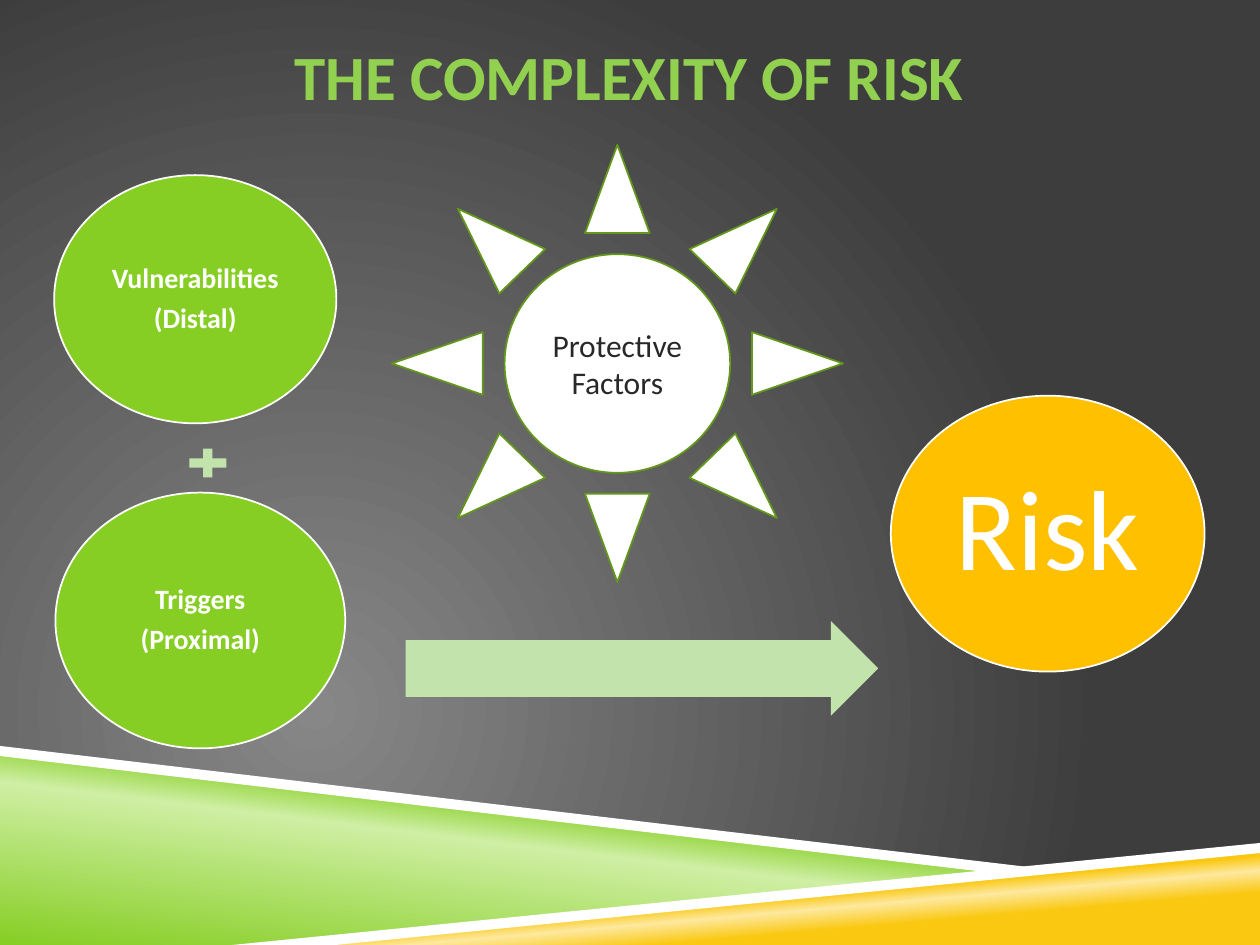
from dataclasses import dataclass

from lxml.etree import SubElement
from pptx import Presentation
from pptx.dml.color import RGBColor
from pptx.enum.shapes import MSO_SHAPE
from pptx.enum.text import MSO_ANCHOR, PP_ALIGN
from pptx.oxml.ns import qn
from pptx.util import Inches, Pt


@dataclass(frozen=True)
class Theme:
    font: str = "Calibri"
    white: str = "FFFFFF"
    title: str = "92D050"
    green: str = "86CE24"
    light_green: str = "CFEFA4"
    pale_green: str = "C3E3AC"
    sun_line: str = "63981B"
    dark: str = "282828"
    amber: str = "FFC000"
    yellow: str = "FAC810"
    light_yellow: str = "FDE99F"
    gray: str = "878787"
    charcoal: str = "3D3D3D"
    title_size: int = 36
    cause_size: int = 16
    factor_size: int = 18
    risk_size: int = 65


theme = Theme()


def set_gradient(solid, stops, angle=None):
    gradient = solid.makeelement(qn("a:gradFill"), {"rotWithShape": "1"})
    stop_list = SubElement(gradient, qn("a:gsLst"))
    for position, color in stops:
        stop = SubElement(stop_list, qn("a:gs"), pos=str(position * 1000))
        SubElement(stop, qn("a:srgbClr"), val=color)
    if angle is None:
        circle = SubElement(gradient, qn("a:path"), path="circle")
        SubElement(circle, qn("a:fillToRect"), l="50000", t="100000", r="100000", b="50000")
    else:
        SubElement(gradient, qn("a:lin"), ang=str(angle * 60000), scaled="0")
    solid.getparent().replace(solid, gradient)


def add_figure(kind, bounds, fill, line=None, lines=(), size=None, color=theme.white,
               bold=False, inset=0.02, line_spacing=0.9, after=0.35):
    figure = slide.shapes.add_shape(kind, *map(Inches, bounds))
    figure.shadow.inherit = False
    figure.fill.solid()
    figure.fill.fore_color.rgb = RGBColor.from_string(fill)
    if line:
        figure.line.color.rgb = RGBColor.from_string(line)
        figure.line.width = Pt(1)
    else:
        figure.line.fill.background()
    frame = figure.text_frame
    frame.word_wrap = True
    frame.vertical_anchor = MSO_ANCHOR.MIDDLE
    frame.margin_left = frame.margin_right = Inches(inset)
    frame.margin_top = frame.margin_bottom = Inches(min(inset, 0.09))
    for index, text in enumerate(lines):
        para = frame.add_paragraph() if index else frame.paragraphs[0]
        para.text = text
        para.alignment = PP_ALIGN.CENTER
        para.line_spacing = line_spacing
        para.space_after = Pt(size * after)
        para.font.name = theme.font
        para.font.size = Pt(size)
        para.font.bold = bold
        para.font.color.rgb = RGBColor.from_string(color)
    return figure


deck = Presentation()
deck.slide_width = Inches(10)
deck.slide_height = Inches(7.5)
slide = deck.slides.add_slide(deck.slide_layouts[5])
slide.background.fill.solid()
set_gradient(slide.element.find(".//" + qn("a:solidFill")),
             [(0, theme.gray), (100, theme.charcoal)])

green_stops = [(0, theme.green), (52, theme.light_green), (66, theme.green)]
yellow_stops = [(28, theme.yellow), (40, theme.light_yellow), (48, theme.yellow)]
bands = [
    ([(0, 5.97), (7.92, 6.92), (2, 7.5), (0, 7.5)], green_stops, 277),
    ([(1.98, 7.5), (10, 6.72), (10, 7.5)], yellow_stops, 265),
    ([(0, 5.92), (0, 6), (7.9, 6.93), (8.32, 6.9)], None, None),
    ([(10, 6.69), (1.84, 7.5), (2.66, 7.5), (10, 6.77)], None, None),
]
for corners, stops, angle in bands:
    points = [(Inches(x), Inches(y)) for x, y in corners]
    builder = slide.shapes.build_freeform(*points[0])
    builder.add_line_segments(points[1:], close=True)
    band = builder.convert_to_shape()
    band.shadow.inherit = False
    band.line.fill.background()
    band.fill.solid()
    band.fill.fore_color.rgb = RGBColor.from_string(theme.white)
    if stops:
        set_gradient(band.element.spPr.find(qn("a:solidFill")), stops, angle)

title = slide.shapes.title
slide.shapes.element.append(title.element)
title.left, title.top, title.width, title.height = map(Inches, (0.35, -0.03, 9.29, 1.25))
title.text = "THE COMPLEXITY OF RISK"
title.text_frame.vertical_anchor = MSO_ANCHOR.MIDDLE
title.text_frame.margin_left = title.text_frame.margin_right = 0
heading = title.text_frame.paragraphs[0]
heading.alignment = PP_ALIGN.CENTER
heading.font.name = theme.font
heading.font.size = Pt(theme.title_size)
heading.font.bold = True
heading.font.color.rgb = RGBColor.from_string(theme.title)

causes = [
    ((0.43, 1.39, 2.24, 1.97), ("Vulnerabilities", "(Distal)")),
    ((0.44, 3.91, 2.3, 2.03), ("Triggers", "(Proximal)")),
]
for bounds, lines in causes:
    add_figure(MSO_SHAPE.OVAL, bounds, theme.green, theme.white, lines,
               theme.cause_size, bold=True)

add_figure(MSO_SHAPE.MATH_PLUS, (1.45, 3.52, 0.4, 0.31), theme.pale_green)
arrow = add_figure(MSO_SHAPE.RIGHT_ARROW, (3.22, 4.93, 3.75, 0.75), theme.pale_green)
arrow.adjustments[0] = 0.6
arrow.adjustments[1] = 0.5
add_figure(MSO_SHAPE.OVAL, (7.07, 3.14, 2.49, 2.19), theme.amber, theme.white,
           ["Risk"], theme.risk_size, inset=0.09)
add_figure(MSO_SHAPE.SUN, (3.11, 1.15, 3.58, 3.47), theme.white, theme.sun_line,
           ["Protective Factors"], theme.factor_size, theme.dark,
           inset=0.1, line_spacing=1.0, after=0)

deck.save("out.pptx")
